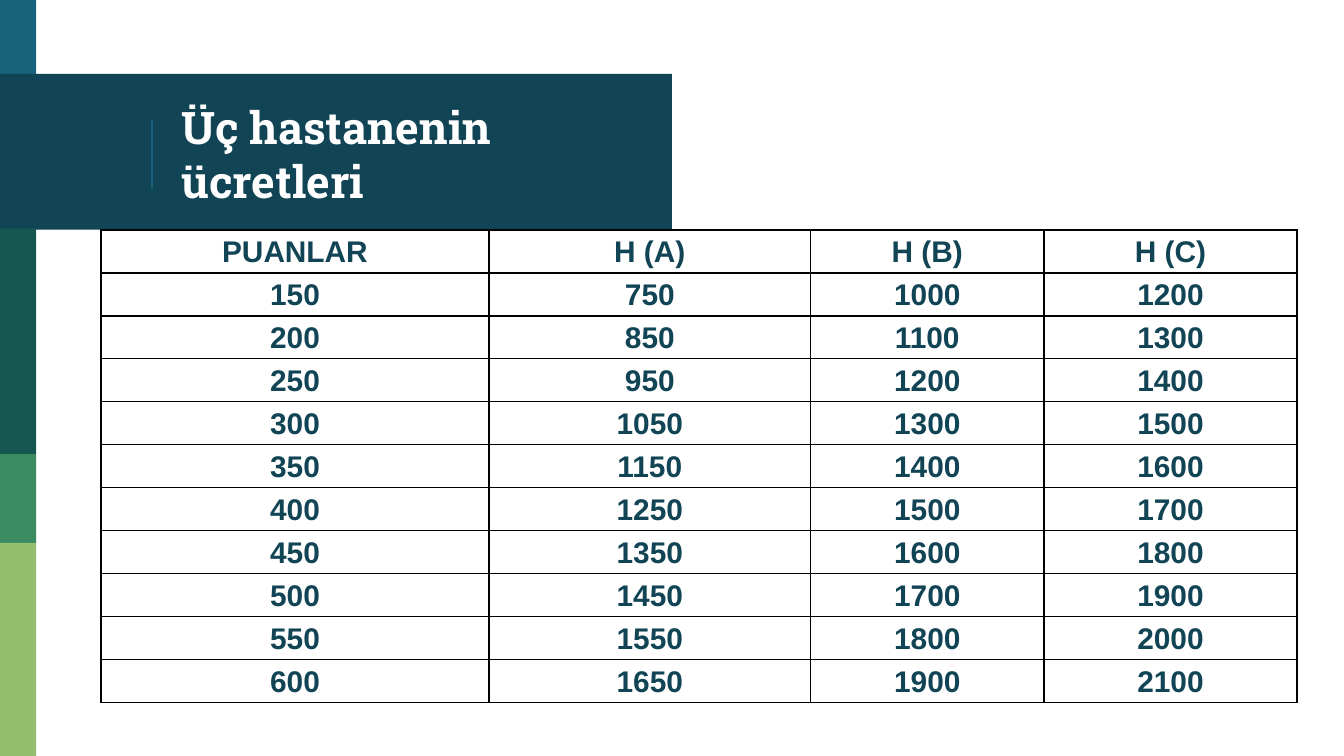
"""Build a slide with a table of the fees of three hospitals by points."""
from dataclasses import dataclass

from lxml import etree
from pptx import Presentation
from pptx import util as u
from pptx.dml.color import RGBColor
from pptx.enum import shapes, text
from pptx.oxml.ns import qn

NAVY, BLUE, WHITE, BLACK = "114454", "18637B", "FFFFFF", "000000"


@dataclass
class Band:
    left: float
    top: float
    width: float
    height: float
    color: str


@dataclass
class Column:
    heading: str
    width: float
    first: int
    step: int


BANDS = [
    Band(0, 0, 0.27, 0.58, BLUE),
    Band(0, 0.55, 5, 1.16, NAVY),
    Band(0, 1.7, 0.27, 1.68, "165751"),
    Band(0, 3.38, 0.27, 0.66, "3B8D61"),
    Band(0, 4.04, 0.27, 1.59, "94BF6E"),
]
COLUMNS = [
    Column("PUANLAR", 2.89, 150, 50),
    Column("H (A)", 2.39, 750, 100),
    Column("H (B)", 1.74, 1000, 100),
    Column("H (C)", 1.88, 1200, 100),
]
LEVELS = 10
ROW_HEIGHT = 0.32


def rgb(color: str) -> RGBColor:
    return RGBColor.from_string(color)


def style_text(para, font: str, size: float, color: str) -> None:
    for span in para.runs:
        span.font.name = font
        span.font.size = u.Pt(size)
        span.font.bold = True
        span.font.color.rgb = rgb(color)


def draw_band(page, band: Band) -> None:
    box = page.shapes.add_shape(
        shapes.MSO_SHAPE.RECTANGLE, u.Inches(band.left), u.Inches(band.top),
        u.Inches(band.width), u.Inches(band.height))
    box.shadow.inherit = False
    box.fill.solid()
    box.fill.fore_color.rgb = rgb(band.color)
    box.line.fill.background()


def draw_rule(page) -> None:
    rule = page.shapes.add_connector(
        shapes.MSO_CONNECTOR.STRAIGHT, u.Inches(1.13), u.Inches(0.89),
        u.Inches(1.13), u.Inches(1.4))
    rule.line.color.rgb = rgb(BLUE)
    rule.line.width = u.Pt(0.75)
    etree.SubElement(rule.element.spPr, qn("a:effectLst"))


def draw_title(page, wording: str) -> None:
    box = page.shapes.add_textbox(
        u.Inches(1.25), u.Inches(0.58), u.Inches(3.51), u.Inches(1.12))
    frame = box.text_frame
    frame.word_wrap = True
    frame.vertical_anchor = text.MSO_ANCHOR.MIDDLE
    frame.margin_left = frame.margin_right = u.Inches(0.1)
    frame.margin_top = frame.margin_bottom = u.Inches(0.1)
    frame.text = wording
    style_text(frame.paragraphs[0], "Roboto Slab", 24, WHITE)


def add_borders(cell) -> None:
    properties = cell._tc.get_or_add_tcPr()
    for position, side in enumerate(("lnL", "lnR", "lnT", "lnB")):
        border = etree.Element(qn(f"a:{side}"), w=str(u.Pt(1)))
        fill = etree.SubElement(border, qn("a:solidFill"))
        etree.SubElement(fill, qn("a:srgbClr"), val=BLACK)
        properties.insert(position, border)


def fill_cell(cell, wording: str) -> None:
    cell.text = wording
    cell.fill.background()
    cell.vertical_anchor = text.MSO_ANCHOR.BOTTOM
    cell.margin_left = cell.margin_right = u.Inches(0.1)
    cell.margin_top, cell.margin_bottom = u.Inches(0.02), u.Inches(0.03)
    para = cell.text_frame.paragraphs[0]
    para.alignment = text.PP_ALIGN.CENTER
    style_text(para, "Arial", 16, NAVY)
    add_borders(cell)


def draw_fees(page, columns: list[Column]) -> None:
    rows = LEVELS + 1
    table = page.shapes.add_table(
        rows, len(columns), u.Inches(0.75), u.Inches(1.71),
        u.Inches(sum(column.width for column in columns)),
        u.Inches(rows * ROW_HEIGHT)).table
    table.first_row = table.horz_banding = False
    for row in table.rows:
        row.height = u.Inches(ROW_HEIGHT)
    for index, column in enumerate(columns):
        table.columns[index].width = u.Inches(column.width)
        fees = [column.first + column.step * level for level in range(LEVELS)]
        for row, value in enumerate([column.heading, *fees]):
            fill_cell(table.cell(row, index), str(value))


def main() -> None:
    deck = Presentation()
    deck.slide_width = u.Inches(10)
    deck.slide_height = deck.slide_width * 9 // 16
    page = deck.slides.add_slide(deck.slide_layouts[6])
    for band in BANDS:
        draw_band(page, band)
    draw_rule(page)
    draw_title(page, "Üç hastanenin ücretleri")
    draw_fees(page, COLUMNS)
    deck.save("out.pptx")


if __name__ == "__main__":
    main()
